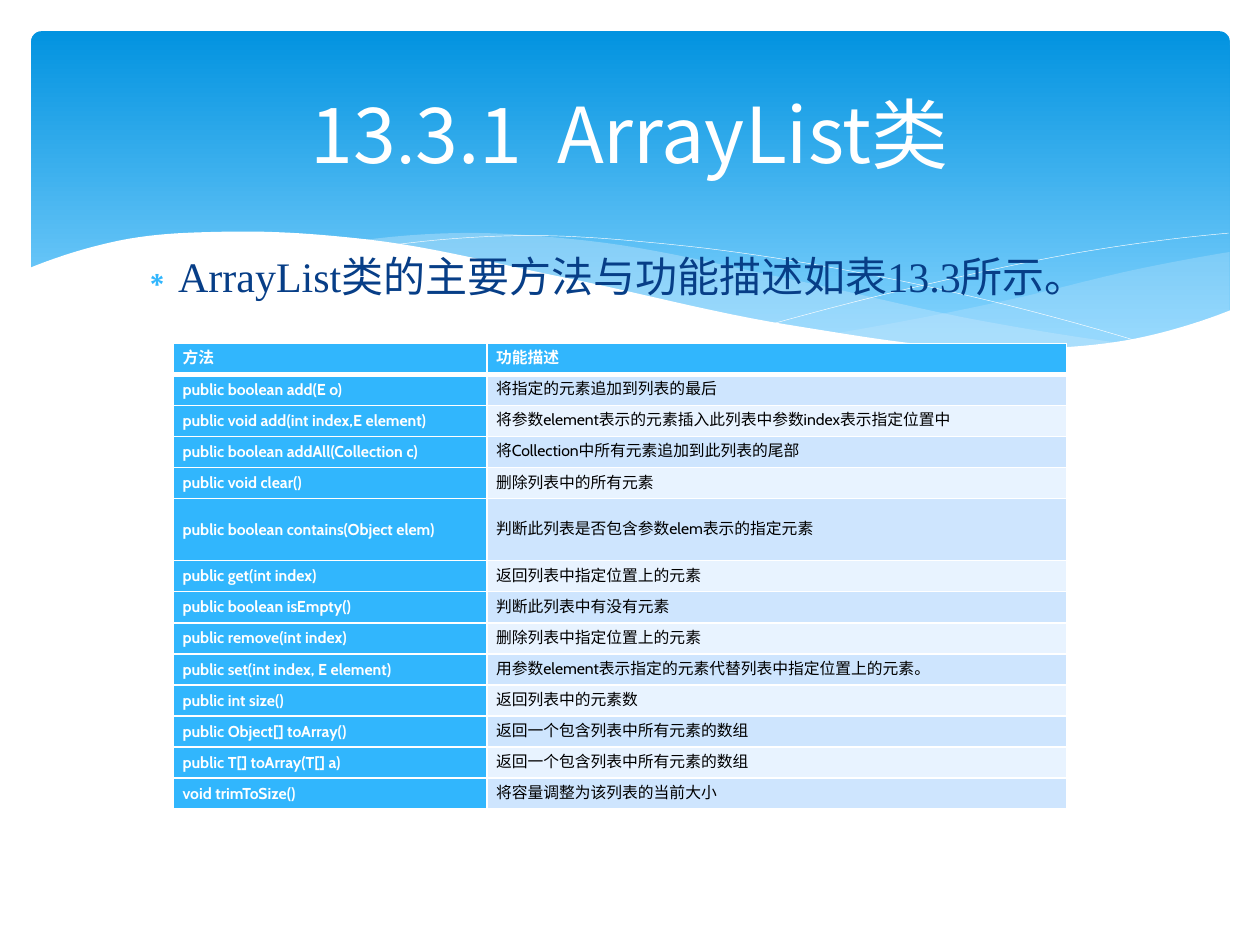
"""Build the slide that lists the main methods of the ArrayList class."""
from itertools import pairwise
from lxml.etree import SubElement
from pptx import Presentation
from pptx.dml.color import RGBColor
from pptx.enum.shapes import MSO_SHAPE as Shape
from pptx.enum.text import MSO_ANCHOR as Anchor, PP_ALIGN as Align
from pptx.oxml.ns import qn
from pptx.util import Cm, Pt

WHITE = RGBColor(0xFF, 0xFF, 0xFF)
BLACK = RGBColor(0x00, 0x00, 0x00)
ACCENT = RGBColor(0x31, 0xB6, 0xFD)
NAVY = RGBColor(0x07, 0x3E, 0x87)
SKY_TOP = RGBColor(0x02, 0x93, 0xE0)
SKY_BOTTOM = RGBColor(0x83, 0xD3, 0xFE)
MIST = RGBColor(0xC6, 0xE7, 0xFC)
BANDS = (RGBColor(0xE8, 0xF3, 0xFF), RGBColor(0xCE, 0xE5, 0xFE))

SANS = "Noto Sans CJK SC"
SERIF = "Times New Roman"
TABLE_FONT = "Cabin"
CURVE_STEPS = 12

RIGHT_CREST = [(16.79, 6.73), (20.45, 6.02), (23.01, 5.41), (24.79, 5.08)]
RIGHT_TROUGH = [(16.79, 6.73), (20.4, 7.06), (22.78, 6.86), (24.79, 6.27)]
MIDDLE_CREST = [(7.26, 4.85), (9.17, 4.7), (11.81, 4.85), (15.98, 5.64),
                (19.69, 6.45), (22.68, 6.93)]
MIDDLE_TROUGH = [(7.26, 4.85), (11.4, 5.64), (16.1, 6.63), (19.63, 7.04), (22.68, 6.93)]
FALLING_LINE = [(7.85, 4.95), (10.57, 4.75), (13.54, 4.93), (17.65, 5.56), (23.04, 6.91)]
RISING_LINE = [(15.57, 6.53), (19, 5.66), (22, 5.05), (24.77, 4.7)]
PAGE_CREST = [(0.58, 5.41), (2.41, 4.85), (4.7, 4.67), (7.42, 4.83), (11.35, 5.59),
              (15.9, 6.55), (20.55, 7.04), (23.11, 6.78), (24.82, 6.25)]
PAGE_BASE = [(0.58, 8.36), (24.82, 8.36)]

METHODS = [
    ("方法", "功能描述"),
    ("public boolean add(E o)", "将指定的元素追加到列表的最后"),
    ("public void add(int index,E element)",
     "将参数element表示的元素插入此列表中参数index表示指定位置中"),
    ("public boolean addAll(Collection c)", "将Collection中所有元素追加到此列表的尾部"),
    ("public void clear()", "删除列表中的所有元素"),
    ("public boolean contains(Object elem)", "判断此列表是否包含参数elem表示的指定元素"),
    ("public get(int index)", "返回列表中指定位置上的元素"),
    ("public boolean isEmpty()", "判断此列表中有没有元素"),
    ("public remove(int index)", "删除列表中指定位置上的元素"),
    ("public set(int index, E element)",
     "用参数element表示指定的元素代替列表中指定位置上的元素。"),
    ("public int size()", "返回列表中的元素数"),
    ("public Object[] toArray()", "返回一个包含列表中所有元素的数组"),
    ("public T[] toArray(T[] a)", "返回一个包含列表中所有元素的数组"),
    ("void trimToSize()", "将容量调整为该列表的当前大小"),
]
TALL_ROW = 5


def knot_slopes(knots):
    """Return the slope of a smooth curve at each of its knots."""
    widths = [right[0] - left[0] for left, right in pairwise(knots)]
    secants = [(right[1] - left[1]) / width
               for (left, right), width in zip(pairwise(knots), widths)]
    inner = [(after * secant + before * next_secant) / (before + after)
             for (before, after), (secant, next_secant)
             in zip(pairwise(widths), pairwise(secants))]
    return [2 * secants[0] - inner[0], *inner, 2 * secants[-1] - inner[-1]]


def smooth(knots):
    """Return points along the cubic Hermite curve through the knots."""
    points = [knots[0]]
    for (start, end), (slope, next_slope) in zip(pairwise(knots), pairwise(knot_slopes(knots))):
        width = end[0] - start[0]
        for step in range(1, CURVE_STEPS + 1):
            t = step / CURVE_STEPS
            blend = t * t * (3 - 2 * t)
            bend = t * (1 - t) * ((1 - t) * slope - t * next_slope)
            points.append((start[0] + t * width,
                           start[1] + blend * (end[1] - start[1]) + bend * width))
    return points


def add_run(paragraph, text, font, size, color, bold=False):
    """Add one formatted run, with a Chinese font beside the Latin one."""
    run = paragraph.add_run()
    run.text = text
    run.font.name = font
    run.font.size = Pt(size)
    run.font.bold = bold
    run.font.color.rgb = color
    SubElement(run._r.get_or_add_rPr(), qn("a:ea"), typeface=SANS)


def place(shape, left, top, width, height):
    """Move and size a shape, in centimetres, and bring it to the front."""
    shape.left, shape.top = Cm(left), Cm(top)
    shape.width, shape.height = Cm(width), Cm(height)
    shape.element.getparent().append(shape.element)


def add_banner(slide):
    """Draw the rounded gradient banner."""
    banner = slide.shapes.add_shape(
        Shape.ROUNDED_RECTANGLE, Cm(0.63), Cm(0.63), Cm(24.16), Cm(6.86))
    banner.adjustments[0] = 0.03
    banner.shadow.inherit = False
    banner.line.fill.background()
    banner.fill.gradient()
    banner.fill.gradient_angle = 270
    stops = zip(banner.fill.gradient_stops, (SKY_TOP, SKY_BOTTOM), (0, 0.9))
    for stop, color, position in stops:
        stop.color.rgb = color
        stop.position = position


def add_outline(slide, points, closed):
    """Draw a freeform through points in centimetres, without a shadow."""
    start, *others = [(Cm(x), Cm(y)) for x, y in points]
    builder = slide.shapes.build_freeform(*start)
    builder.add_line_segments(others, close=closed)
    shape = builder.convert_to_shape()
    shape.shadow.inherit = False
    return shape


def add_wave(slide, upper, lower, color, opacity=100):
    """Fill the area between two edges with the given opacity in percent."""
    wave = add_outline(slide, upper + lower[::-1], True)
    wave.line.fill.background()
    wave.fill.solid()
    wave.fill.fore_color.rgb = color
    if opacity < 100:
        for node in wave.element.spPr.iter(qn("a:srgbClr")):
            SubElement(node, qn("a:alpha"), val=str(opacity * 1000))


def add_hairline(slide, knots):
    """Draw a thin white curve."""
    curve = add_outline(slide, smooth(knots), False)
    curve.fill.background()
    curve.line.color.rgb = WHITE
    curve.line.width = Pt(0.25)


def fill_title(title):
    """Write the centred title."""
    place(title, 1.27, 0.94, 22.86, 3.48)
    title.text_frame.vertical_anchor = Anchor.MIDDLE
    paragraph = title.text_frame.paragraphs[0]
    paragraph.alignment = Align.CENTER
    for text, font in (("13", SANS), (".", SERIF), ("3.1  ArrayList类", SANS)):
        add_run(paragraph, text, font, 44, WHITE)


def fill_body(body):
    """Write the bulleted introduction to the table."""
    place(body, 2.49, 4.93, 20.57, 9.58)
    body.text_frame.vertical_anchor = Anchor.TOP
    paragraph = body.text_frame.paragraphs[0]
    add_run(paragraph, "ArrayList类的主要方法与功能描述如表13.3所示。", SERIF, 24, NAVY)
    properties = paragraph._p.get_or_add_pPr()
    properties.set("marL", str(Cm(0.76)))
    properties.set("indent", str(-Cm(0.76)))
    SubElement(SubElement(properties, qn("a:buClr")), qn("a:srgbClr"), val=str(ACCENT))
    SubElement(properties, qn("a:buChar"), char="∗")
    paragraph.space_before = Pt(4.8)


def add_borders(cell, top, bottom):
    """Give a cell white borders; top and bottom are widths in points."""
    properties = cell._tc.get_or_add_tcPr()
    for side, width in (("L", 1), ("R", 1), ("T", top), ("B", bottom)):
        line = SubElement(properties, qn(f"a:ln{side}"), w=str(Pt(width)))
        SubElement(SubElement(line, qn("a:solidFill")), qn("a:srgbClr"), val=str(WHITE))


def fill_cell(cell, text, row, column):
    """Write and format one cell of the method table."""
    heading = row == 0 or column == 0
    add_borders(cell, 3 if row == 1 else 1, 3 if row == 0 else 1)
    cell.fill.solid()
    cell.fill.fore_color.rgb = ACCENT if heading else BANDS[row % 2]
    cell.vertical_anchor = Anchor.MIDDLE
    cell.margin_left = cell.margin_right = Cm(0.18)
    cell.margin_top = cell.margin_bottom = 0
    paragraph = cell.text_frame.paragraphs[0]
    paragraph.line_spacing = Pt(11)
    add_run(paragraph, text, TABLE_FONT, 9, WHITE if heading else BLACK, heading)


def add_method_table(slide):
    """Add the table of methods and what they do."""
    row_height = Cm(9.4 / (len(METHODS) + 1))
    table = slide.shapes.add_table(len(METHODS), 2, Cm(3.5), Cm(6.92), Cm(18), Cm(9.4)).table
    table.columns[0].width, table.columns[1].width = Cm(6.32), Cm(11.68)
    for row, texts in enumerate(METHODS):
        table.rows[row].height = row_height * (2 if row == TALL_ROW else 1)
        for column, text in enumerate(texts):
            fill_cell(table.cell(row, column), text, row, column)


def main():
    """Build and save the presentation."""
    presentation = Presentation()
    presentation.slide_width, presentation.slide_height = Cm(25.4), Cm(19.05)
    slide = presentation.slides.add_slide(presentation.slide_layouts[1])
    add_banner(slide)
    add_wave(slide, smooth(RIGHT_CREST), smooth(RIGHT_TROUGH), MIST, 29)
    add_wave(slide, smooth(MIDDLE_CREST), smooth(MIDDLE_TROUGH), MIST, 40)
    for knots in (FALLING_LINE, RISING_LINE):
        add_hairline(slide, knots)
    add_wave(slide, smooth(PAGE_CREST), PAGE_BASE, WHITE)
    fill_title(slide.shapes.title)
    fill_body(slide.placeholders[1])
    add_method_table(slide)
    presentation.save("out.pptx")


if __name__ == "__main__":
    main()
